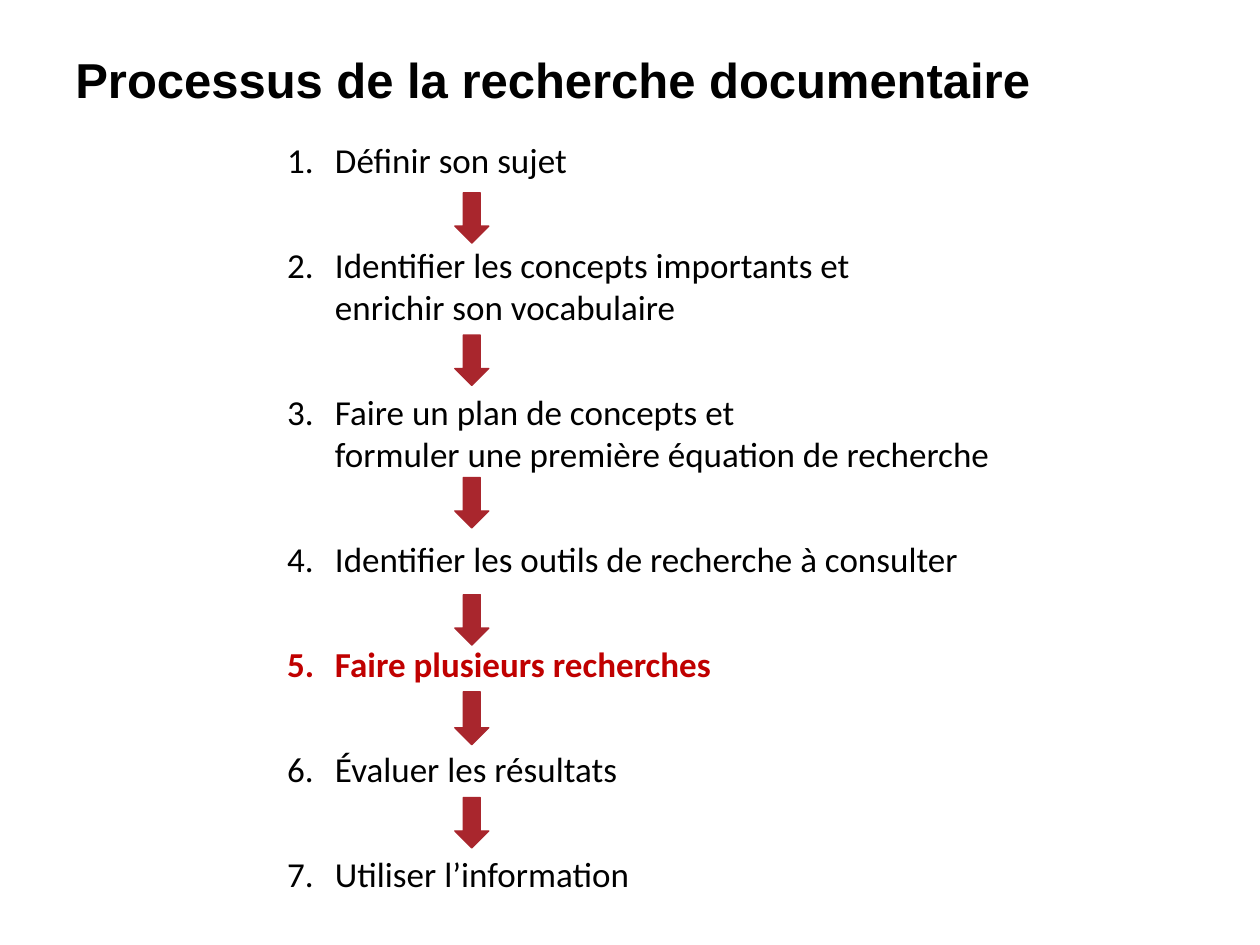
import dataclasses

import lxml.etree
import pptx
import pptx.dml.color
import pptx.enum.shapes
import pptx.enum.text
import pptx.oxml.ns
import pptx.util

Inches = pptx.util.Inches
Pt = pptx.util.Pt
RGB = pptx.dml.color.RGBColor.from_string


@dataclasses.dataclass(frozen=True)
class Theme:
    ink: RGB = RGB("000000")
    highlight: RGB = RGB("C00000")
    arrow: RGB = RGB("A9262D")
    title_font: str = "Arial"
    step_font: str = "Calibri"
    title_size: Pt = Pt(28)
    step_size: Pt = Pt(20)
    step_gap: Pt = Pt(36)


theme = Theme()


def add_run(paragraph, text, font, size, color, bold):
    run = paragraph.add_run()
    run.text = text
    run.font.name = font
    run.font.size = size
    run.font.color.rgb = color
    run.font.bold = bold


def add_frame(left, top, width, height, anchor):
    frame = slide.shapes.add_textbox(
        Inches(left), Inches(top), Inches(width), Inches(height)
    ).text_frame
    frame.word_wrap = True
    frame.vertical_anchor = anchor
    return frame


presentation = pptx.Presentation()
presentation.slide_width = Inches(10)
presentation.slide_height = Inches(7.5)
slide = presentation.slides.add_slide(presentation.slide_layouts[6])

title = add_frame(0.5, 0, 9, 1.25, pptx.enum.text.MSO_ANCHOR.MIDDLE)
add_run(title.paragraphs[0], "Processus de la recherche documentaire",
        theme.title_font, theme.title_size, theme.ink, True)

steps = [
    ["Définir son sujet"],
    ["Identifier les concepts importants et", "enrichir son vocabulaire"],
    ["Faire un plan de concepts et", "formuler une première équation de recherche"],
    ["Identifier les outils de recherche à consulter"],
    ["Faire plusieurs recherches"],
    ["Évaluer les résultats"],
    ["Utiliser l’information"],
]
current_step = 5

process = add_frame(1.77, 1.05, 6.91, 6.27, pptx.enum.text.MSO_ANCHOR.TOP)
for number, lines in enumerate(steps, start=1):
    step = process.paragraphs[0] if number == 1 else process.add_paragraph()
    step.space_after = theme.step_gap
    properties = step._p.get_or_add_pPr()
    properties.set("marL", str(Inches(0.79)))
    properties.set("indent", str(Inches(-0.38)))
    numbering = lxml.etree.SubElement(properties, pptx.oxml.ns.qn("a:buAutoNum"))
    numbering.set("type", "arabicPeriod")
    is_current = number == current_step
    color = theme.highlight if is_current else theme.ink
    for index, line in enumerate(lines):
        if index:
            step.add_line_break()
        add_run(step, line, theme.step_font, theme.step_size, color, is_current)

arrows = [(1.53, 0.4), (2.66, 0.4), (3.79, 0.4), (4.72, 0.4), (5.49, 0.42), (6.33, 0.4)]
for top, height in arrows:
    arrow = slide.shapes.add_shape(
        pptx.enum.shapes.MSO_SHAPE.DOWN_ARROW,
        Inches(3.61), Inches(top), Inches(0.27), Inches(height),
    )
    arrow.shadow.inherit = False
    arrow.fill.solid()
    arrow.fill.fore_color.rgb = theme.arrow
    arrow.line.color.rgb = theme.arrow
    arrow.line.width = Pt(0.75)

presentation.save("out.pptx")
